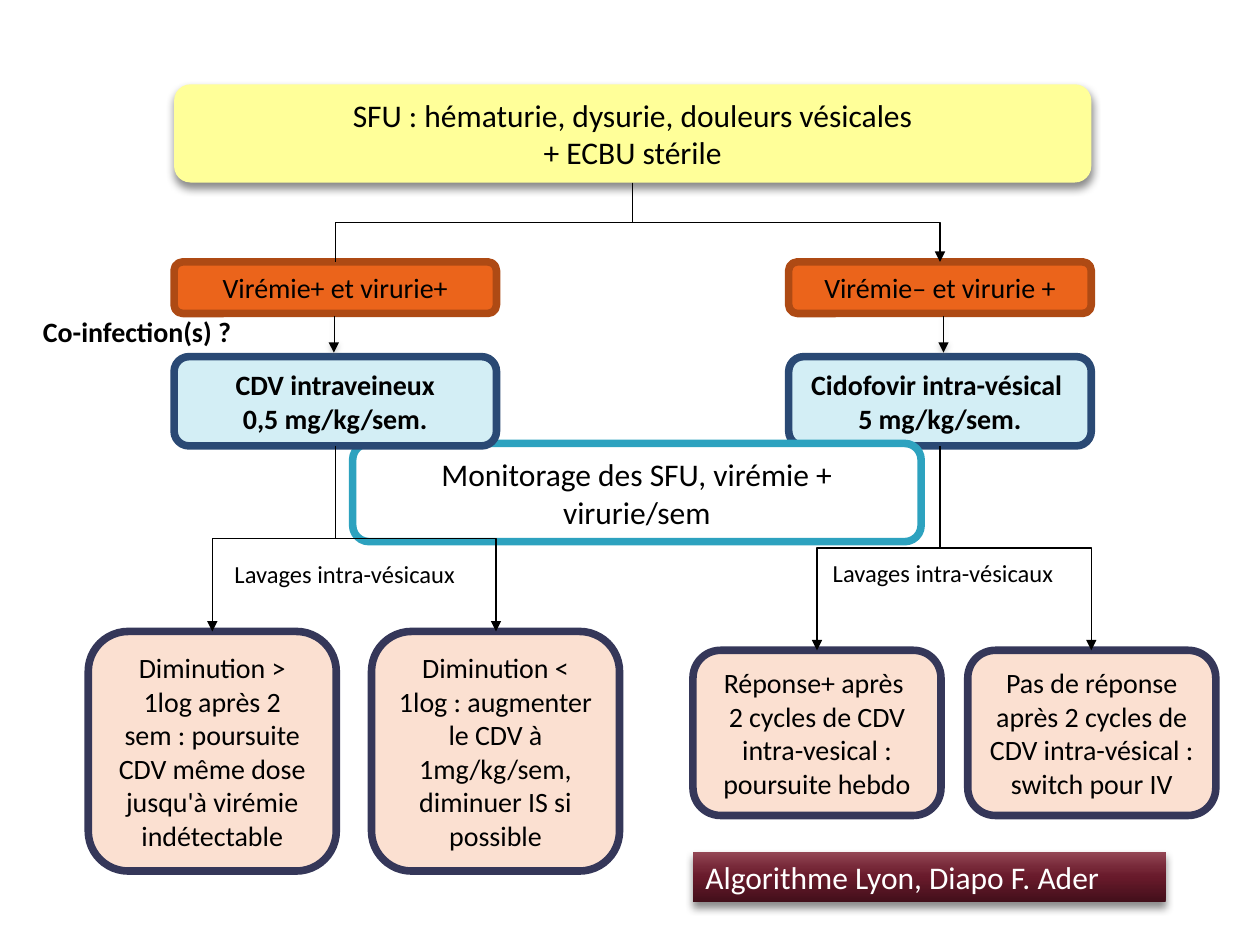
from dataclasses import dataclass
from typing import Optional

from lxml.etree import SubElement
from pptx import Presentation
from pptx.dml.color import RGBColor
from pptx.enum.shapes import MSO_CONNECTOR, MSO_SHAPE
from pptx.enum.text import MSO_ANCHOR, PP_ALIGN
from pptx.oxml import parse_xml
from pptx.oxml.ns import nsdecls, qn
from pptx.util import Cm, Pt

FONT = "Calibri"
BLACK = RGBColor(0x00, 0x00, 0x00)
WHITE = RGBColor(0xFF, 0xFF, 0xFF)
YELLOW = RGBColor(0xFF, 0xFF, 0x99)
ORANGE = RGBColor(0xEB, 0x64, 0x1B)
RUST = RGBColor(0xAE, 0x4A, 0x14)
ICE = RGBColor(0xD3, 0xEE, 0xF5)
NAVY = RGBColor(0x2A, 0x49, 0x74)
TEAL = RGBColor(0x2D, 0xA2, 0xBF)
PEACH = RGBColor(0xFB, 0xE0, 0xD1)
INDIGO = RGBColor(0x35, 0x37, 0x59)
WINE_STOPS = ((0, "420F1A"), (50, "681A2B"), (70, "772939"), (100, "944755"))


@dataclass(frozen=True)
class Style:
    fill: RGBColor
    line: Optional[RGBColor]
    size: int = 16
    bold: bool = False


@dataclass(frozen=True)
class Step:
    text: str
    left: float
    top: float
    width: float
    height: float
    style: Style


@dataclass(frozen=True)
class Link:
    start: tuple[float, float]
    end: tuple[float, float]
    arrow: bool = True


@dataclass(frozen=True)
class Label:
    text: str
    left: float
    top: float
    width: float
    height: float
    size: int = 14
    bold: bool = False


SYMPTOMS = Style(YELLOW, None, 18)
FINDING = Style(ORANGE, RUST)
TREATMENT = Style(ICE, NAVY, bold=True)
MONITORING = Style(WHITE, TEAL, 18)
OUTCOME = Style(PEACH, INDIGO)

STEPS = [
    Step("SFU : hématurie, dysurie, douleurs vésicales\n+ ECBU stérile",
         3.51, 1.7, 18.49, 1.98, SYMPTOMS),
    Step("Virémie– et virurie +", 15.9, 5.28, 6.1, 1.04, FINDING),
    Step("Virémie+ et virurie+", 3.51, 5.28, 6.5, 1.04, FINDING),
    Step("Cidofovir intra-vésical \n5 mg/kg/sem.", 15.9, 7.19, 6.1, 1.8, TREATMENT),
    Step("Monitorage des SFU, virémie + virurie/sem", 7.11, 8.94, 11.46, 1.98, MONITORING),
    Step("Diminution > 1log après 2 sem : poursuite CDV même dose jusqu'à virémie indétectable",
         1.78, 12.73, 5, 4.83, OUTCOME),
    Step("CDV intraveineux\n0,5 mg/kg/sem.", 3.51, 7.19, 6.5, 1.8, TREATMENT),
    Step("Diminution < 1log : augmenter le CDV à 1mg/kg/sem, diminuer IS si possible",
         7.49, 12.73, 5, 4.83, OUTCOME),
    Step("Pas de réponse après 2 cycles de CDV intra-vésical : switch pour IV",
         19.51, 13.11, 5, 3.33, OUTCOME),
    Step("Réponse+ après \n2 cycles de CDV intra-vesical : poursuite hebdo",
         13.97, 13.11, 5, 3.33, OUTCOME),
]

ROOT, LEFT, RIGHT = (12.75, 3.68), (6.76, 8.99), (18.95, 8.99)
BRANCHES = [
    Link(ROOT, (18.95, 5.28)),
    Link(ROOT, (6.76, 5.28), arrow=False),
    Link(LEFT, (4.28, 12.73)),
    Link(LEFT, (10, 12.73)),
    Link(RIGHT, (16.47, 13.11)),
    Link(RIGHT, (22, 13.11)),
]
ARROWS = [Link((19.02, 6.38), (19.02, 7.11)), Link((6.73, 6.38), (6.73, 7.11))]

LABELS = [
    Label("Lavages intra-vésicaux", 4.45, 11.15, 5, 0.86),
    Label("Lavages intra-vésicaux", 16.51, 11.13, 5, 0.86),
    Label("Co-infection(s) ?", 0.58, 6.22, 4.37, 0.94, 16, True),
]


def write(shape, text: str, size: int, color=BLACK, bold=False, align=PP_ALIGN.CENTER) -> None:
    shape.text_frame.text = text
    for para in shape.text_frame.paragraphs:
        para.alignment = align
        for span in para.runs:
            span.font.name, span.font.size = FONT, Pt(size)
            span.font.bold, span.font.color.rgb = bold, color


def add_shadow(shape, color: str, alpha: int, blur: float, distance: float) -> None:
    properties = shape._element.spPr
    for effects in properties.findall(qn("a:effectLst")):
        properties.remove(effects)
    properties.append(parse_xml(
        f'<a:effectLst {nsdecls("a")}><a:outerShdw blurRad="{Pt(blur)}" dist="{Pt(distance)}" '
        f'dir="5400000" rotWithShape="0"><a:srgbClr val="{color}">'
        f'<a:alpha val="{alpha * 1000}"/></a:srgbClr></a:outerShdw></a:effectLst>'))


def add_step(page, step: Step) -> None:
    box = page.shapes.add_shape(MSO_SHAPE.FLOWCHART_ALTERNATE_PROCESS, Cm(step.left),
                                Cm(step.top), Cm(step.width), Cm(step.height))
    box.shadow.inherit = False
    box.fill.solid()
    box.fill.fore_color.rgb = step.style.fill
    if step.style.line is None:
        box.line.fill.background()
        add_shadow(box, "000000", 45, 5, 3)
    else:
        box.line.color.rgb = step.style.line
        box.line.width = Pt(4.33)
    box.text_frame.word_wrap = True
    box.text_frame.vertical_anchor = MSO_ANCHOR.MIDDLE
    write(box, step.text, step.style.size, bold=step.style.bold)


def finish_line(line, width: float, arrow: bool) -> None:
    line.line.color.rgb = BLACK
    line.line.width = Pt(width)
    if arrow:
        SubElement(line.line._get_or_add_ln(), qn("a:tailEnd"), type="triangle")
    SubElement(line._element.spPr, qn("a:effectLst"))


def add_branch(page, link: Link) -> None:
    """Draw an elbow that leaves downwards: a turned connector about the same centre."""
    (x1, y1), (x2, y2) = link.start, link.end
    length, spread = y2 - y1, abs(x2 - x1)
    left, top = (x1 + x2 - length) / 2, (y1 + y2 - spread) / 2
    line = page.shapes.add_connector(MSO_CONNECTOR.ELBOW, Cm(left), Cm(top),
                                     Cm(left + length), Cm(top + spread))
    frame = line._element.spPr.find(qn("a:xfrm"))
    if x2 > x1:
        frame.set("rot", "16200000")
        frame.set("flipH", "1")
    else:
        frame.set("rot", "5400000")
    finish_line(line, 0.75, link.arrow)


def add_arrow(page, link: Link) -> None:
    line = page.shapes.add_connector(MSO_CONNECTOR.STRAIGHT, *map(Cm, link.start + link.end))
    finish_line(line, 0.25, link.arrow)
    add_shadow(line, "808080", 38, 3.1, 1.6)


def add_label(page, label: Label) -> None:
    box = page.shapes.add_textbox(Cm(label.left), Cm(label.top), Cm(label.width), Cm(label.height))
    box.text_frame.word_wrap = False
    write(box, label.text, label.size, bold=label.bold)


def add_credit(page) -> None:
    box = page.shapes.add_shape(MSO_SHAPE.RECTANGLE, Cm(13.97), Cm(17.17), Cm(9.53), Cm(1.02))
    box.line.fill.background()
    stops = "".join(f'<a:gs pos="{place * 1000}"><a:srgbClr val="{color}"/></a:gs>'
                    for place, color in WINE_STOPS)
    box._element.spPr.find(qn("a:prstGeom")).addnext(parse_xml(
        f'<a:gradFill {nsdecls("a")} rotWithShape="1"><a:gsLst>{stops}</a:gsLst>'
        '<a:lin ang="16200000" scaled="0"/></a:gradFill>'))
    add_shadow(box, "000000", 45, 5, 3)
    box.text_frame.word_wrap = True
    box.text_frame.vertical_anchor = MSO_ANCHOR.TOP
    write(box, "Algorithme Lyon, Diapo F. Ader", 18, WHITE, align=PP_ALIGN.LEFT)


def main() -> None:
    deck = Presentation()
    deck.slide_width, deck.slide_height = Cm(25.4), Cm(19.05)
    page = deck.slides.add_slide(deck.slide_layouts[6])
    # Decision boxes
    for step in STEPS:
        add_step(page, step)
    # Branches and arrows
    for link in BRANCHES:
        add_branch(page, link)
    for link in ARROWS:
        add_arrow(page, link)
    # Side notes and source
    for label in LABELS:
        add_label(page, label)
    add_credit(page)
    deck.save("out.pptx")


if __name__ == "__main__":
    main()
